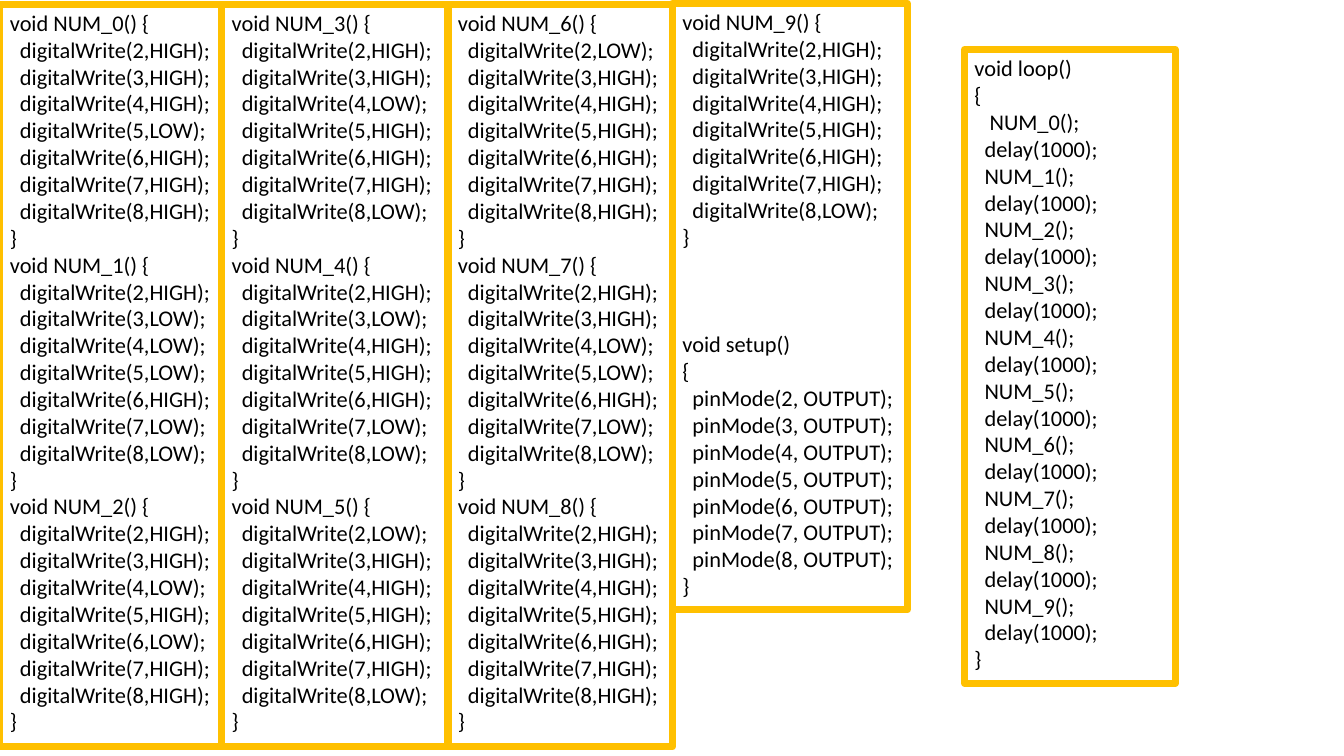
import dataclasses

import pptx
import pptx.dml.color
import pptx.enum.text
import pptx.util

Pt = pptx.util.Pt

INDENT = 7.2
SETUP_GAP = 57.6
PINS = range(2, 9)
HIGH_PINS = ["234678", "26", "23578", "23567", "2456",
             "34567", "345678", "236", "2345678", "234567"]


@dataclasses.dataclass
class Line:
    text: str
    indent: float = 0
    before: float = 0


@dataclasses.dataclass
class CodeBox:
    left: float
    top: float
    width: float
    height: float
    lines: list[Line]


def rgb(color: str) -> pptx.dml.color.RGBColor:
    return pptx.dml.color.RGBColor.from_string(color)


def digit_lines(digit: int) -> list[Line]:
    writes = [
        Line(f"digitalWrite({pin},{'HIGH' if str(pin) in HIGH_PINS[digit] else 'LOW'});", INDENT)
        for pin in PINS
    ]
    return [Line(f"void NUM_{digit}() {{"), *writes, Line("}")]


def digit_column(first: int) -> list[Line]:
    return [line for digit in range(first, first + 3) for line in digit_lines(digit)]


def setup_lines() -> list[Line]:
    modes = [Line(f"pinMode({pin}, OUTPUT);", INDENT) for pin in PINS]
    return [Line("void setup()", before=SETUP_GAP), Line("{"), *modes, Line("}")]


def loop_lines() -> list[Line]:
    lines = [Line("void loop()"), Line("{")]
    for digit in range(len(HIGH_PINS)):
        call_indent = INDENT if digit else 1.5 * INDENT
        lines += [Line(f"NUM_{digit}();", call_indent), Line("delay(1000);", INDENT)]
    return lines + [Line("}")]


def add_code_box(s: pptx.slide.Slide, box: CodeBox) -> None:
    sp = s.shapes.add_textbox(Pt(box.left), Pt(box.top), Pt(box.width), Pt(box.height))
    sp.line.color.rgb = rgb("FFC000")
    sp.line.width = Pt(5)
    tf = sp.text_frame
    tf.word_wrap = True
    tf.auto_size = pptx.enum.text.MSO_AUTO_SIZE.SHAPE_TO_FIT_TEXT
    for i, line in enumerate(box.lines):
        p = tf.add_paragraph() if i else tf.paragraphs[0]
        p.text = line.text
        p.font.name = "Calibri"
        p.font.size = Pt(16)
        p.font.color.rgb = rgb("000000")
        if line.before:
            p.space_before = Pt(line.before)
        if line.indent:
            p._p.get_or_add_pPr().set("marL", str(Pt(line.indent)))


def main() -> None:
    prs = pptx.Presentation()
    prs.slide_width = Pt(960)
    prs.slide_height = Pt(540)
    s = prs.slides.add_slide(prs.slide_layouts[6])
    boxes = [
        CodeBox(0, 2.9, 158.4, 530.6, digit_column(0)),
        CodeBox(158.4, 2.9, 162, 530.6, digit_column(3)),
        CodeBox(320, 2.9, 160.5, 530.6, digit_column(6)),
        CodeBox(480.4, 2.2, 167.8, 433.4, digit_lines(9) + setup_lines()),
        CodeBox(689, 35.3, 150.5, 452.9, loop_lines()),
    ]
    for box in boxes:
        add_code_box(s, box)
    prs.save("out.pptx")


if __name__ == "__main__":
    main()
